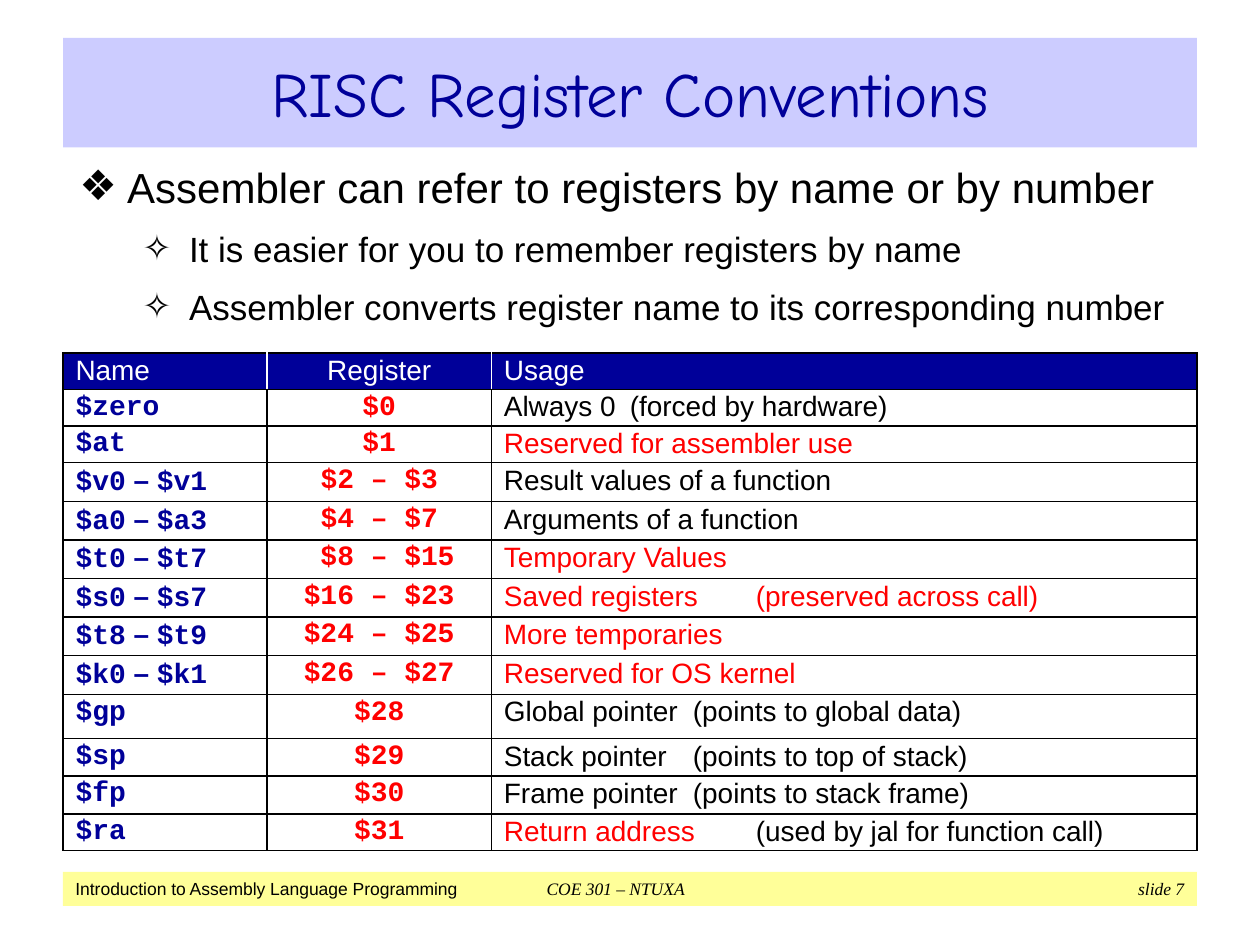
from lxml import etree
from pptx import Presentation
from pptx.dml.color import RGBColor
from pptx.enum.shapes import MSO_SHAPE
from pptx.enum.text import MSO_ANCHOR, MSO_AUTO_SIZE, PP_ALIGN
from pptx.oxml.ns import qn
from pptx.util import Inches, Pt

LEFT, CENTER = PP_ALIGN.LEFT, PP_ALIGN.CENTER
MIDDLE, TOP = MSO_ANCHOR.MIDDLE, MSO_ANCHOR.TOP
NO_AUTOFIT = MSO_AUTO_SIZE.NONE
RECTANGLE = MSO_SHAPE.RECTANGLE

COLORS = {
    "navy": "000099", "lavender": "CCCCFF", "yellow": "FFFF99",
    "red": "FF0000", "black": "000000", "white": "FFFFFF",
}
SANS, MONO, SERIF, COMIC = "Arial", "Courier New", "Times New Roman", "Comic Neue"

# Content
TITLE = "RISC Register Conventions"
POINTS = [  # text, level
    ("Assembler can refer to registers by name or by number", 0),
    ("It is easier for you to remember registers by name", 1),
    ("Assembler converts register name to its corresponding number", 1),
]
LEVELS = [  # bullet, size, indent, hanging, space before
    ("❖", 24, 0.38, 0.38, 0),
    ("✧", 20, 0.87, 0.37, 9),
]
HEADINGS = ["Name", "Register", "Usage"]
REGISTERS = [  # name, register, usage runs, row height
    ("$zero", "$0", [("Always 0\t(forced by hardware)", "black")], 0.29),
    ("$at", "$1", [("Reserved for assembler use", "red")], 0.29),
    ("$v0 – $v1", "$2 – $3", [("Result values of a function", "black")], 0.3),
    ("$a0 – $a3", "$4 – $7", [("Arguments of a function", "black")], 0.3),
    ("$t0 – $t7", " $8 – $15", [("Temporary Values", "red")], 0.3),
    ("$s0 – $s7", "$16 – $23", [("Saved registers\t(preserved across call)", "red")], 0.3),
    ("$t8 – $t9", "$24 – $25", [("More temporaries", "red")], 0.3),
    ("$k0 – $k1", "$26 – $27", [("Reserved for OS kernel", "red")], 0.3),
    ("$gp", "$28", [("Global pointer\t(points to global data)", "black")], 0.35),
    ("$sp", "$29", [("Stack pointer\t(points to top of stack)", "black")], 0.3),
    ("$fp", "$30", [("Frame pointer\t(points to stack frame)", "black")], 0.3),
    ("$ra", "$31", [("Return address", "red"),
                    ("\t(used by jal for function call)", "black")], 0.29),
]
HEADER_HEIGHT = 0.29
COLUMN_WIDTHS = [1.62, 1.78, 5.6]
COLUMN_ALIGNS = [LEFT, CENTER, LEFT]
FOOTER_RUNS = [  # text, font, italic
    ("Introduction to Assembly Language Programming", SANS, False),
    ("\tCOE 301 – NTUXA\tslide 7", SERIF, True),
]
FOOTER_TABS = [(3.74, "l"), (8.8, "r")]


def rgb(color):
    return RGBColor.from_string(COLORS[color])


def style(font, size, face, color, bold=False, italic=False):
    font.size, font.name = Pt(size), face
    font.bold, font.italic = bold, italic
    font.color.rgb = rgb(color)


def place(shape, left, top, width, height):
    shape.left, shape.top = Inches(left), Inches(top)
    shape.width, shape.height = Inches(width), Inches(height)


def fill(target, color):
    target.fill.solid()
    target.fill.fore_color.rgb = rgb(color)


def set_borders(cell, sides):
    """Draw 1 pt cell borders, given as side -> colour in schema order."""
    properties = cell._tc.get_or_add_tcPr()
    for side, color in sides.items():
        line = etree.SubElement(properties, qn(f"a:ln{side}"), w=str(Pt(1)))
        solid = etree.SubElement(line, qn("a:solidFill"))
        etree.SubElement(solid, qn("a:srgbClr"), val=COLORS[color])


def write_cell(cell, runs, align):
    """Fill a cell with (text, face, colour, bold) runs."""
    cell.margin_left = cell.margin_right = Inches(0.1)
    cell.margin_top = cell.margin_bottom = Inches(0.02)
    paragraph = cell.text_frame.paragraphs[0]
    paragraph.alignment = align
    for text, face, color, bold in runs:
        run = paragraph.add_run()
        run.text = text
        style(run.font, 16, face, color, bold)


def name_runs(name):
    """Register names are monospaced, the dash of a range is not."""
    first, dash, last = name.partition(" – ")
    parts = [(first, MONO), (dash, SANS), (last, MONO)]
    return [(text, face, "navy", True) for text, face in parts if text]


def add_title(slide):
    title = slide.shapes.title
    place(title, 0.5, 0.3, 9, 0.87)
    fill(title, "lavender")
    frame = title.text_frame
    frame.text = TITLE
    frame.auto_size, frame.vertical_anchor = NO_AUTOFIT, MIDDLE
    frame.paragraphs[0].alignment = CENTER
    style(frame.paragraphs[0].font, 36, COMIC, "navy")


def add_points(slide):
    body = slide.placeholders[1]
    place(body, 0.53, 1.23, 8.94, 1.51)
    frame = body.text_frame
    frame.text = "\n".join(text for text, _ in POINTS)
    frame.auto_size, frame.vertical_anchor = NO_AUTOFIT, TOP
    for paragraph, (_, level) in zip(frame.paragraphs, POINTS):
        bullet, size, indent, hanging, space = LEVELS[level]
        paragraph.level = level
        paragraph.space_before = Pt(space)
        style(paragraph.font, size, SANS, "black")
        properties = paragraph._p.get_or_add_pPr()
        properties.set("marL", str(Inches(indent)))
        properties.set("indent", str(-Inches(hanging)))
        mark = etree.Element(qn("a:buChar"), char=bullet)
        properties.find(qn("a:defRPr")).addprevious(mark)


def add_register_table(slide):
    heights = [HEADER_HEIGHT] + [row[3] for row in REGISTERS]
    table = slide.shapes.add_table(
        len(heights), len(HEADINGS), Inches(0.5), Inches(2.8),
        Inches(sum(COLUMN_WIDTHS)), Inches(sum(heights))).table
    table.first_row = table.horz_banding = False
    for column, width in zip(table.columns, COLUMN_WIDTHS):
        column.width = Inches(width)
    for row, height in zip(table.rows, heights):
        row.height = Inches(height)

    rows = [[[(text, SANS, "white", False)] for text in HEADINGS]]
    for name, register, usage, _ in REGISTERS:
        rows.append([
            name_runs(name),
            [(register, MONO, "red", True)],
            [(text, SANS, color, False) for text, color in usage],
        ])
    last = len(HEADINGS) - 1
    for r, row in enumerate(rows):
        inner = "white" if r == 0 else "black"
        for c, runs in enumerate(row):
            cell = table.cell(r, c)
            write_cell(cell, runs, COLUMN_ALIGNS[c])
            set_borders(cell, {
                "L": inner if c > 0 else "black",
                "R": inner if c < last else "black",
                "T": "black", "B": "black"})
            if r == 0:
                fill(cell, "navy")
            else:
                cell.fill.background()


def add_footer(slide):
    footer = slide.shapes.add_shape(RECTANGLE, 0, 0, 0, 0)
    place(footer, 0.5, 6.92, 9, 0.27)
    fill(footer, "yellow")
    footer.line.fill.background()
    footer.shadow.inherit = False
    frame = footer.text_frame
    frame.margin_top = frame.margin_bottom = 0
    frame.vertical_anchor = MIDDLE
    paragraph = frame.paragraphs[0]
    paragraph.alignment = LEFT
    tabs = etree.SubElement(paragraph._p.get_or_add_pPr(), qn("a:tabLst"))
    for position, align in FOOTER_TABS:
        etree.SubElement(tabs, qn("a:tab"), pos=str(Inches(position)), algn=align)
    for text, face, italic in FOOTER_RUNS:
        run = paragraph.add_run()
        run.text = text
        style(run.font, 10, face, "black", italic=italic)


def main():
    presentation = Presentation()
    presentation.slide_width, presentation.slide_height = Inches(10), Inches(7.5)
    slide = presentation.slides.add_slide(presentation.slide_layouts[1])
    add_footer(slide)
    add_title(slide)
    add_register_table(slide)
    add_points(slide)
    presentation.save("out.pptx")


if __name__ == "__main__":
    main()
